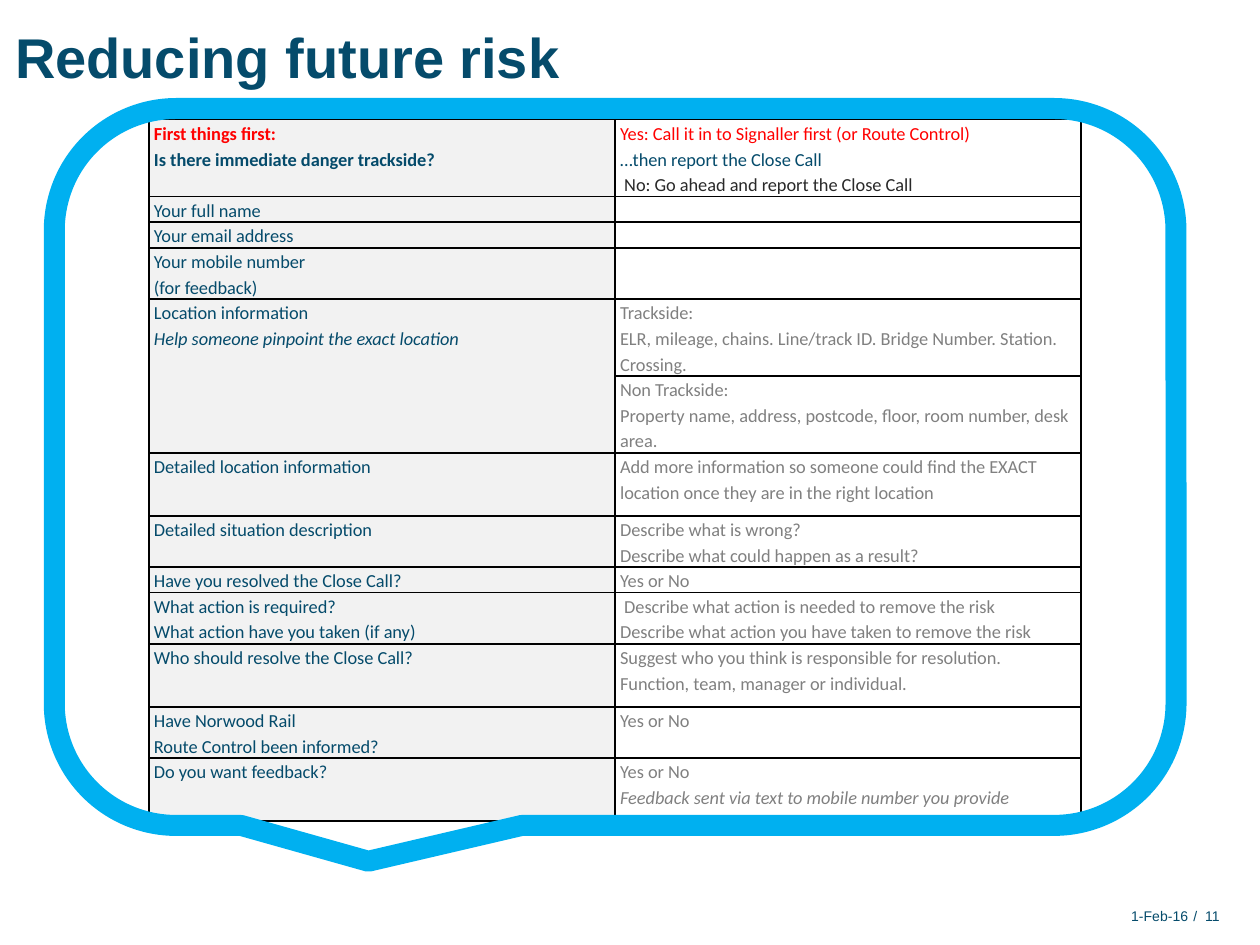
from lxml import etree
from pptx import Presentation
from pptx import util as u
from pptx.dml.color import RGBColor
from pptx.enum import shapes, text
from pptx.oxml import ns

Pt = u.Pt
COLORS = {"navy": "054B6B", "red": "FF0000", "dark": "292929", "grey": "808080",
          "label": "F2F2F2", "white": "FFFFFF", "black": "000000", "sky": "00B0F0"}
LINE_H, TALL_H = 14.5, 36
ANCHOR = text.MSO_ANCHOR
ALIGN = text.PP_ALIGN

# Each line is plain text or (text, format); each row is (height, label, answer)
ROWS = [
    (3 * LINE_H,
     [("First things first:", {"color": "red", "bold": True}),
      ("Is there immediate danger trackside?", {"bold": True})],
     [("Yes: Call it in to Signaller first (or Route Control)", {"color": "red"}),
      ("…then report the Close Call", {"color": "navy"}),
      (" No: Go ahead and report the Close Call", {"color": "dark"})]),
    (LINE_H, ["Your full name"], []),
    (LINE_H, ["Your email address"], []),
    (2 * LINE_H, ["Your mobile number", "(for feedback)"], []),
    (3 * LINE_H,
     ["Location information",
      ("Help someone pinpoint the exact location", {"italic": True})],
     ["Trackside:",
      "ELR, mileage, chains. Line/track ID. Bridge Number. Station. Crossing."]),
    (3 * LINE_H, None,
     ["Non Trackside:",
      "Property name, address, postcode, floor, room number, desk area."]),
    (TALL_H, ["Detailed location information"],
     ["Add more information so someone could find the EXACT location once "
      "they are in the right location"]),
    (2 * LINE_H, ["Detailed situation description"],
     ["Describe what is wrong?", "Describe what could happen as a result?"]),
    (LINE_H, ["Have you resolved the Close Call?"], ["Yes or No"]),
    (2 * LINE_H, ["What action is required?", "What action have you taken (if any)"],
     [" Describe what action is needed to remove the risk",
      "Describe what action you have taken to remove the risk"]),
    (TALL_H, ["Who should resolve the Close Call?"],
     ["Suggest who you think is responsible for resolution.",
      "Function, team, manager or individual."]),
    (2 * LINE_H, ["Have Norwood Rail", "Route Control been informed?"], ["Yes or No"]),
    (TALL_H, ["Do you want feedback?"],
     ["Yes or No",
      ("Feedback sent via text to mobile number you provide", {"italic": True})]),
]


def rgb(name):
    return RGBColor.from_string(COLORS[name])


def write(p, content, size=10.5, font="Calibri", color="navy", bold=False,
          italic=False, align=None, spacing=None):
    """Put one formatted run in a paragraph."""
    p.alignment = align
    p.line_spacing = spacing
    r = p.add_run()
    r.text = content
    r.font.size, r.font.name = Pt(size), font
    r.font.bold, r.font.italic = bold, italic
    r.font.color.rgb = rgb(color)


def add_text(s, box, content, **fmt):
    sp = s.shapes.add_textbox(*map(Pt, box))
    tf = sp.text_frame
    tf.word_wrap = True
    tf.margin_left = tf.margin_right = tf.margin_top = tf.margin_bottom = 0
    tf.vertical_anchor = ANCHOR.MIDDLE
    write(tf.paragraphs[0], content, font="Arial", **fmt)


def add_borders(cell):
    tc_pr = cell._tc.get_or_add_tcPr()
    for i, side in enumerate(("lnL", "lnR", "lnT", "lnB")):
        ln = etree.Element(ns.qn(f"a:{side}"), w=str(Pt(1)))
        fill = etree.SubElement(ln, ns.qn("a:solidFill"))
        etree.SubElement(fill, ns.qn("a:srgbClr"), val=COLORS["black"])
        tc_pr.insert(i, ln)


def fill_cell(cell, lines, fill, color):
    cell.margin_left = cell.margin_right = Pt(3)
    cell.margin_top = cell.margin_bottom = 0
    cell.fill.solid()
    cell.fill.fore_color.rgb = rgb(fill)
    add_borders(cell)
    tf = cell.text_frame
    if not lines:
        # Keep an empty cell one text line high
        tf.paragraphs[0]._p.get_or_add_endParaRPr().set("sz", "1050")
    for i, line in enumerate(lines or []):
        content, fmt = (line, {}) if isinstance(line, str) else line
        p = tf.add_paragraph() if i else tf.paragraphs[0]
        write(p, content, spacing=1.15, **{"color": color, **fmt})


def add_form(s, x, y, w):
    """Two-column form; a label of None continues the cell above."""
    height = sum(row[0] for row in ROWS)
    table = s.shapes.add_table(len(ROWS), 2, Pt(x), Pt(y), Pt(w), Pt(height)).table
    table.first_row = table.horz_banding = False
    for col in table.columns:
        col.width = Pt(w / 2)
    for i, (row_h, label, answer) in enumerate(ROWS):
        table.rows[i].height = Pt(row_h)
        fill_cell(table.cell(i, 0), label, "label", "navy")
        fill_cell(table.cell(i, 1), answer, "white", "grey")
        if label is None:
            table.cell(i - 1, 0).merge(table.cell(i, 0))


def add_callout(s, x, y, w, h):
    sp = s.shapes.add_shape(shapes.MSO_SHAPE.ROUNDED_RECTANGULAR_CALLOUT,
                            Pt(x), Pt(y), Pt(w), Pt(h))
    for i, value in enumerate((-0.22, 0.55, 0.17)):
        sp.adjustments[i] = value
    sp.shadow.inherit = False
    sp.fill.background()
    sp.line.color.rgb = rgb("sky")
    sp.line.width = Pt(12)


def add_footer(s, x, y, w, h):
    """Date, slash and page number, set from the right edge of the box."""
    num_w, slash_w, gap = 11.5, 3, 3
    num_x = x + w - num_w
    slash_x = num_x - slash_w - 0.5
    add_text(s, (x, y, slash_x - gap - x, h), "1-Feb-16", size=8, align=ALIGN.RIGHT)
    add_text(s, (slash_x, y, slash_w, h), "/", size=8)
    add_text(s, (num_x, y, num_w, h), "11", size=8, align=ALIGN.RIGHT)


def main():
    prs = Presentation()
    prs.slide_width, prs.slide_height = Pt(720), Pt(540)
    s = prs.slides.add_slide(prs.slide_layouts[6])
    add_form(s, 85, 68.4, 532.8)
    add_footer(s, 511.2, 516.2, 185.8, 14.4)
    add_text(s, (8.6, 9.4, 572.4, 45.4), "Reducing future risk", size=32, bold=True)
    add_callout(s, 31, 62, 641, 409.7)
    prs.save("out.pptx")


if __name__ == "__main__":
    main()
